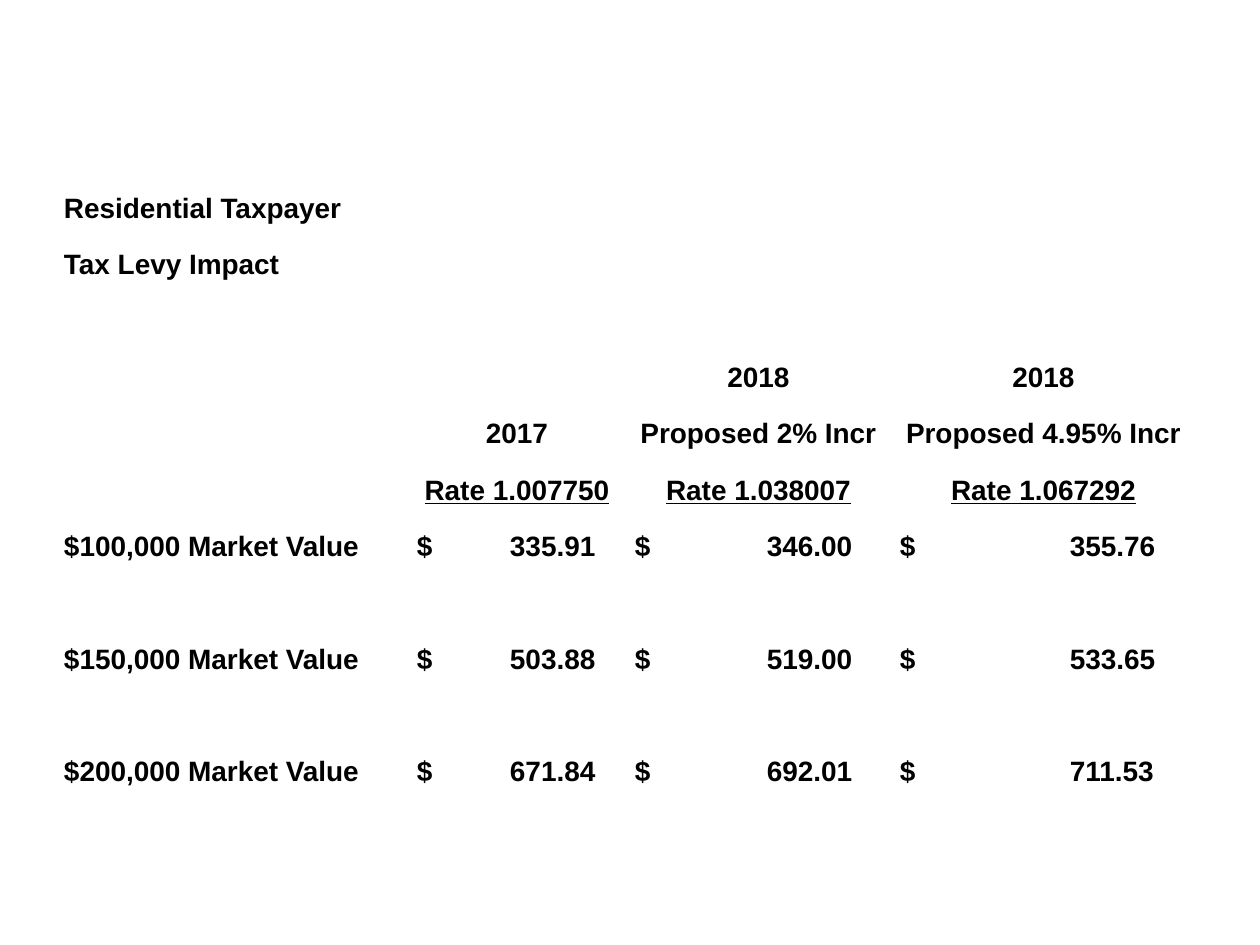
from lxml.etree import SubElement
from pptx import Presentation
from pptx.dml.color import RGBColor
from pptx.enum.text import MSO_ANCHOR, PP_ALIGN
from pptx.oxml.ns import qn
from pptx.util import Inches, Pt

PX_PER_INCH = 126
COLORS = {"text": "000000"}
COLUMN_WIDTHS = [345, 218, 265, 305]
AMOUNT_TABS = [93, 132, 170]
AMOUNT_INDENT = 9
ROW_COUNT = 11

TITLES = ["Residential Taxpayer", "Tax Levy Impact"]
HEADINGS = [
    ["2017", "Rate 1.007750"],
    ["2018", "Proposed 2% Incr", "Rate 1.038007"],
    ["2018", "Proposed 4.95% Incr", "Rate 1.067292"],
]
LEVIES = [
    ("$100,000 Market Value", ["335.91", "346.00", "355.76"]),
    ("$150,000 Market Value", ["503.88", "519.00", "533.65"]),
    ("$200,000 Market Value", ["671.84", "692.01", "711.53"]),
]
FIRST_LEVY_ROW = 6


def px(length):
    return Inches(length / PX_PER_INCH)


def write(cell, text, align=PP_ALIGN.LEFT, underline=False):
    paragraph = cell.text_frame.paragraphs[0]
    paragraph.text = text
    paragraph.alignment = align
    font = paragraph.font
    font.name = "Arial"
    font.size = Pt(16)
    font.bold = True
    font.underline = underline
    font.color.rgb = RGBColor.from_string(COLORS["text"])
    return paragraph


def write_amount(cell, amount, tab):
    cell.margin_left = px(AMOUNT_INDENT)
    properties = write(cell, f"$\t{amount}")._p.get_or_add_pPr()
    stops = SubElement(properties, qn("a:tabLst"))
    SubElement(stops, qn("a:tab"), pos=str(px(tab)), algn="l")
    properties.append(properties.find(qn("a:defRPr")))


def add_levy_table(slide, left, top, width, height):
    table = slide.shapes.add_table(
        ROW_COUNT, len(COLUMN_WIDTHS), px(left), px(top), px(width), px(height)
    ).table
    table.first_row = False
    table.horz_banding = False
    for column, column_width in zip(table.columns, COLUMN_WIDTHS):
        column.width = px(column_width)
    for row in table.rows:
        row.height = px(height / ROW_COUNT)
    for cell in table.iter_cells():
        cell.fill.background()
        cell.vertical_anchor = MSO_ANCHOR.BOTTOM
        cell.margin_left = cell.margin_right = cell.margin_top = px(1)
        cell.margin_bottom = 0

    for row, title in enumerate(TITLES):
        write(table.cell(row, 0), title)
    for column, lines in enumerate(HEADINGS, start=1):
        for row, line in enumerate(lines, start=FIRST_LEVY_ROW - len(lines)):
            write(table.cell(row, column), line, PP_ALIGN.CENTER, line.startswith("Rate"))
    for index, (market_value, amounts) in enumerate(LEVIES):
        row = FIRST_LEVY_ROW + 2 * index
        write(table.cell(row, 0), market_value)
        for column, (amount, tab) in enumerate(zip(amounts, AMOUNT_TABS), start=1):
            write_amount(table.cell(row, column), amount, tab)


def main():
    presentation = Presentation()
    presentation.slide_width = px(1260)
    presentation.slide_height = px(945)
    slide = presentation.slides.add_slide(presentation.slide_layouts[6])
    add_levy_table(slide, 63, 168, sum(COLUMN_WIDTHS), 620)
    presentation.save("out.pptx")


if __name__ == "__main__":
    main()
